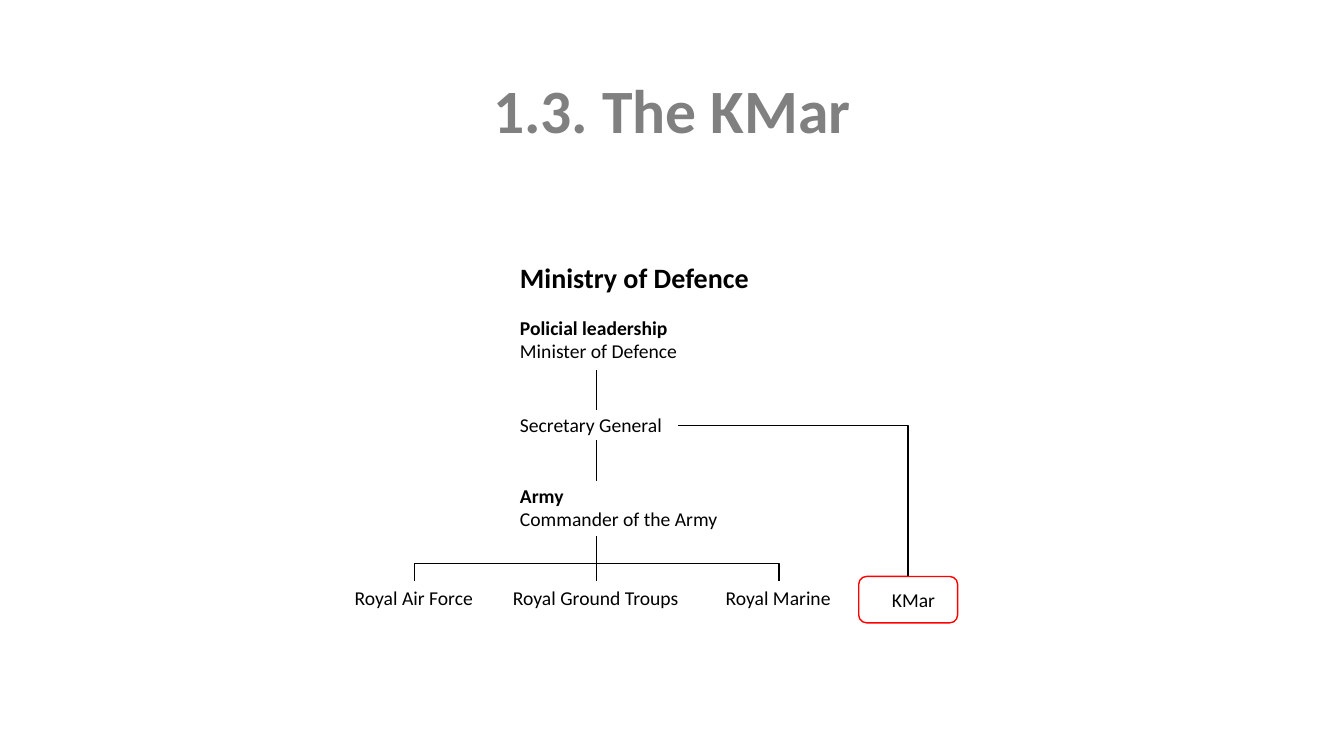
"""Build the slide with the KMar organisation chart of the Ministry of Defence."""
from pptx import Presentation, util as u
from pptx.dml.color import RGBColor
from pptx.enum import shapes, text
from pptx.oxml.ns import qn
from pptx.oxml.xmlchemy import OxmlElement

COLORS = {"title": "808080", "ink": "000000", "frame": "FF0000"}


def add_label(left, top, width, height, lines, size=14, color="ink", wrap=False):
    box = slide.shapes.add_textbox(u.Pt(left), u.Pt(top), u.Pt(width), u.Pt(height))
    frame = box.text_frame
    frame.word_wrap = wrap
    frame.auto_size = text.MSO_AUTO_SIZE.SHAPE_TO_FIT_TEXT
    for index, (words, bold) in enumerate(lines):
        para = frame.paragraphs[0] if index == 0 else frame.add_paragraph()
        span = para.add_run()
        span.text = words
        span.font.name = "Calibri"
        span.font.size = u.Pt(size)
        span.font.bold = bold
        span.font.color.rgb = RGBColor.from_string(COLORS[color])
    return box


def add_line(kind, x1, y1, x2, y2):
    line = slide.shapes.add_connector(kind, u.Pt(x1), u.Pt(y1), u.Pt(x2), u.Pt(y2))
    line.line.color.rgb = RGBColor.from_string(COLORS["ink"])
    line.line.width = u.Pt(1)
    properties = line._element.spPr
    properties.append(OxmlElement("a:effectLst"))
    if kind == shapes.MSO_CONNECTOR.ELBOW:
        properties.find(qn("a:prstGeom")).set("prst", "bentConnector2")
    return line


deck = Presentation()
deck.slide_width, deck.slide_height = u.Pt(960), u.Pt(540)
slide = deck.slides.add_slide(deck.slide_layouts[6])

title = add_label(66, 28.8, 828, 104.4, [("1.3. The KMar", True)], 44, "title", True)
title.text_frame.auto_size = text.MSO_AUTO_SIZE.NONE
title.text_frame.vertical_anchor = text.MSO_ANCHOR.MIDDLE
title.text_frame.paragraphs[0].alignment = text.PP_ALIGN.CENTER
title.text_frame.paragraphs[0].line_spacing = 0.9

column = 364.3
add_label(column, 182.2, 304.6, 31.5, [("Ministry of Defence", True)], 20, wrap=True)
add_label(column, 221.8, 131, 41.2,
          [("Policial leadership", True), ("Minister of Defence", False)])
add_label(column, 291.6, 120.3, 24.3, [("Secretary General", False)])
add_label(column, 342, 162.7, 41.2,
          [("Army", True), ("Commander of the Army", False)], wrap=True)

branch_top = 414.7
add_label(246.2, branch_top, 100.1, 24.3, [("Royal Air Force", False)])
troops = add_label(359.3, branch_top, 133.9, 24.3, [("Royal Ground Troups", False)])
add_label(511.2, branch_top, 90.7, 24.3, [("Royal Marine", False)])
add_label(630, 416.2, 45.4, 24.3, [("KMar", False)])

trunk = 426.25
for top in (264.2, 314.6):
    add_line(shapes.MSO_CONNECTOR.STRAIGHT, trunk, top, trunk, top + 28.8)
stem = add_line(shapes.MSO_CONNECTOR.STRAIGHT, trunk, 383, trunk, branch_top)
stem.end_connect(troops, 0)

for x1, y1, x2, y2 in ((trunk, 402.3, 296.2, branch_top),
                       (trunk, 402.3, 556.5, branch_top),
                       (484.6, 303.8, 648.7, 411.8)):
    add_line(shapes.MSO_CONNECTOR.ELBOW, x1, y1, x2, y2)

highlight = slide.shapes.add_shape(shapes.MSO_SHAPE.ROUNDED_RECTANGLE,
                                   u.Pt(613.4), u.Pt(411.8), u.Pt(70.6), u.Pt(33.1))
highlight.shadow.inherit = False
highlight.fill.background()
highlight.line.color.rgb = RGBColor.from_string(COLORS["frame"])
highlight.line.width = u.Pt(1)

deck.save("out.pptx")
